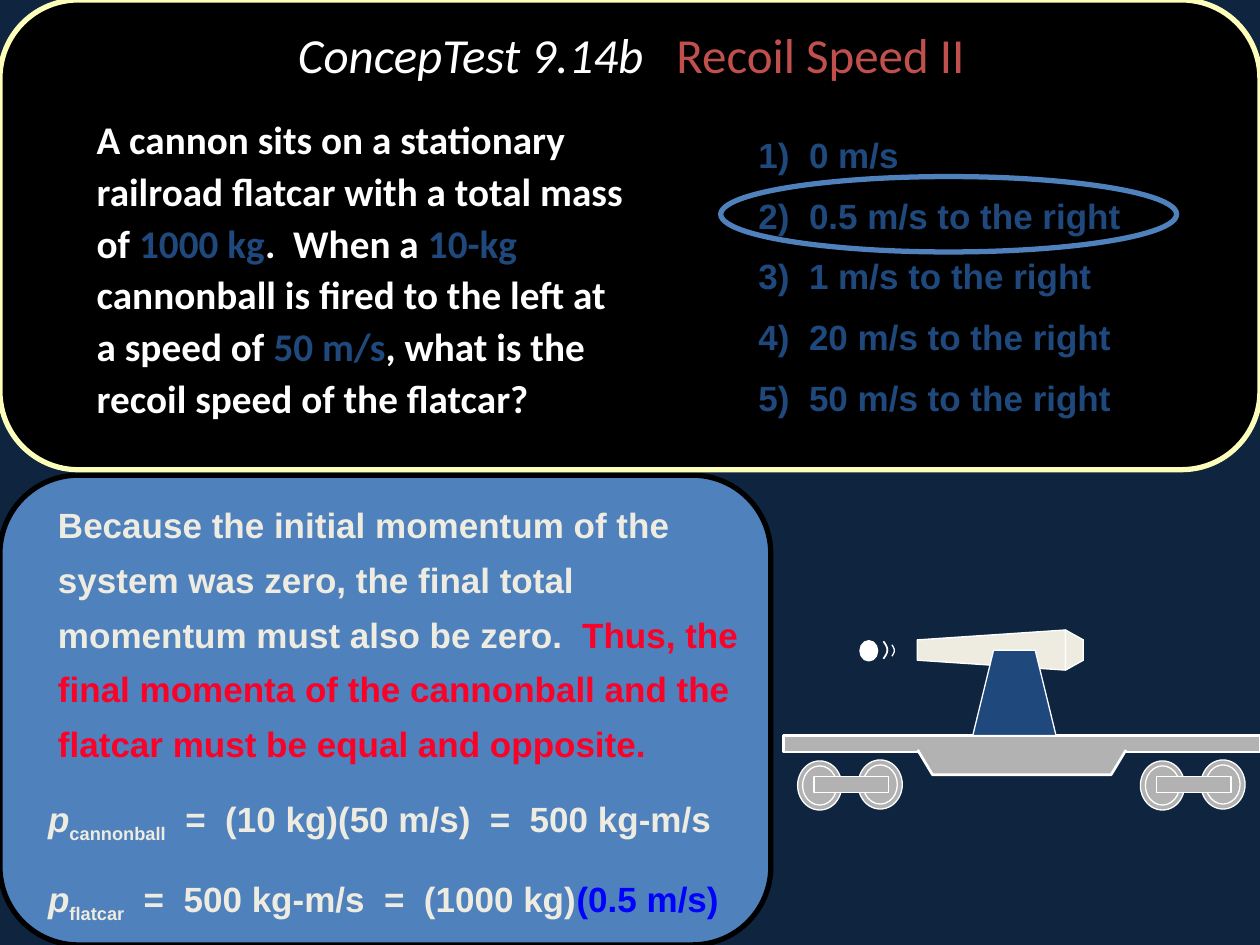
from math import pi, sin

from pptx import Presentation
from pptx.dml.color import RGBColor
from pptx.enum.shapes import MSO_SHAPE as Kind
from pptx.enum.text import MSO_ANCHOR as Anchor, PP_ALIGN as Align
from pptx.util import Cm, Pt

HUES = {
    "night": "0F243E", "black": "000000", "white": "FFFFFF",
    "cream": "FCFEB9", "ivory": "EEECE1", "blue": "4F81BD",
    "navy": "1F497D", "brick": "C0504D", "red": "FC0128",
    "pure": "0000FF", "grey": "B2B2B2",
}


def hue(name):
    return RGBColor.from_string(HUES[name])


def paint(shape, fill, line, width):
    shape.shadow.inherit = False
    if fill:
        shape.fill.solid()
        shape.fill.fore_color.rgb = hue(fill)
    else:
        shape.fill.background()
    shape.line.color.rgb = hue(line)
    shape.line.width = Pt(width)


def add_form(slide, kind, box, fill, line="white", width=0.75):
    shape = slide.shapes.add_shape(kind, *[Cm(v) for v in box])
    paint(shape, fill, line, width)


def add_path(slide, points, fill, width=0.75, close=True):
    dots = [(Cm(x), Cm(y)) for x, y in points]
    path = slide.shapes.build_freeform(*dots[0])
    path.add_line_segments(dots[1:], close=close)
    paint(path.convert_to_shape(), fill, "white", width)


def add_box(slide, box):
    frame = slide.shapes.add_textbox(*[Cm(v) for v in box]).text_frame
    frame.word_wrap = True
    return frame


def add_para(frame, runs, font, size, space, before=0, left=0, hang=0, bold=True):
    """Write one paragraph; runs are (text, colour, style), style "i" or "sub"."""
    para = frame.paragraphs[0]
    if para.runs:
        para = frame.add_paragraph()
    para.line_spacing = space
    para.space_before = Pt(before)
    props = para._p.get_or_add_pPr()
    props.set("marL", str(Cm(left)))
    props.set("indent", str(-Cm(hang)))
    para.font.name = font
    para.font.size = Pt(size)
    para.font.bold = bold
    for text, color, style in runs:
        run = para.add_run()
        run.text = text
        run.font.color.rgb = hue(color)
        if style == "i":
            run.font.italic = True
        elif style == "sub":
            run.font.size = Pt(18)
            run.font._element.set("baseline", "-25000")
    return para


def add_title(slide):
    frame = add_box(slide, (2.59, 0, 20.27, 2.34))
    frame.vertical_anchor = Anchor.MIDDLE
    runs = [("ConcepTest 9.14b   ", "white", "i"),
            ("Recoil Speed II", "brick", "")]
    para = add_para(frame, runs, "Calibri", 28, 0.9, bold=False)
    para.alignment = Align.CENTER


def add_question(slide):
    frame = add_box(slide, (0.58, 2.11, 12.29, 7.32))
    runs = [
        ("A cannon sits on a stationary railroad flatcar with a total mass of ",
         "white", ""),
        ("1000 kg", "navy", ""),
        (".  When a ", "white", ""),
        ("10-kg", "navy", ""),
        (" cannonball is fired to the left at a speed of ", "white", ""),
        ("50 m/s", "navy", ""),
        (", what is the recoil speed of the flatcar?", "white", ""),
    ]
    add_para(frame, runs, "Calibri", 22.4, 1.1, before=4.5, left=1.12)


def add_answers(slide):
    frame = add_box(slide, (15.04, 2.39, 9.14, 6.35))
    speeds = ["0 m/s"] + [f"{v} m/s to the right" for v in ("0.5", 1, 20, 50)]
    for num, speed in enumerate(speeds, 1):
        add_para(frame, [(f"{num})  {speed}", "navy", "")], "Arial", 20, 1.2,
                 before=6, left=1.12, hang=1.12)


def add_reason(slide):
    frame = add_box(slide, (0.13, 9.78, 15.39, 8.81))
    runs = [
        ("Because the initial momentum of the system was zero, the final total "
         "momentum must also be zero.  ", "ivory", ""),
        ("Thus, the final momenta of the cannonball and the flatcar must be "
         "equal and opposite.", "red", ""),
    ]
    add_para(frame, runs, "Arial", 20, 1.3, before=10, left=0.79)
    sums = [
        ("cannonball", "  =  (10 kg)(50 m/s)  =  500 kg-m/s", ""),
        ("flatcar", "  =  500 kg-m/s  =  (1000 kg)", "(0.5 m/s)"),
    ]
    for name, work, result in sums:
        runs = [("p", "ivory", "i"), (name, "ivory", "sub"), (work, "ivory", "")]
        if result:
            runs.append((result, "pure", ""))
        add_para(frame, runs, "Arial", 20, 1.3, before=11, left=0.59)


def add_truck(slide, left):
    """Two double-rimmed wheels joined by a bar."""
    for x, y in ((left, 15.34), (left + 1.22, 15.32)):
        for gap in (0, 0.1):
            box = (x + gap, y + gap, 0.89 - 2 * gap, 0.99 - 2 * gap)
            add_form(slide, Kind.OVAL, box, "grey")
    add_form(slide, Kind.RECTANGLE, (left + 0.33, 15.65, 1.5, 0.33), "grey")


def add_arc(slide, x, top, drop, bulge, width):
    steps = 8
    points = [(x + bulge * sin(pi * n / steps), top + drop * n / steps)
              for n in range(steps + 1)]
    add_path(slide, points, None, width, close=False)


def add_car(slide):
    # Flatcar bed and wheels
    add_form(slide, Kind.RECTANGLE, (15.8, 14.83, 9.6, 0.33), "grey", width=1.5)
    bed = [(18.5, 15.12), (18.8, 15.62), (22.4, 15.62), (22.7, 15.12)]
    add_path(slide, bed, "grey", 1.5, close=False)
    for left in (16.08, 22.99):
        add_truck(slide, left)

    # Cannon: barrel, breech, stand
    for tip in (18.49, 21.84):
        add_path(slide, [(21.48, 12.7), (tip, 12.9), (tip, 13.31), (21.48, 13.51)],
                 "ivory")
    stand = [(19.61, 14.83), (20.03, 13.11), (20.87, 13.11), (21.29, 14.83)]
    add_path(slide, stand, "navy")

    # Cannonball and its motion marks
    add_form(slide, Kind.OVAL, (17.35, 12.93, 0.33, 0.38), "white", width=1.5)
    add_arc(slide, 17.81, 12.93, 0.35, 0.08, 1)
    add_arc(slide, 17.98, 13, 0.23, 0.05, 0.75)


def main():
    deck = Presentation()
    deck.slide_width, deck.slide_height = Cm(25.4), Cm(19.05)
    slide = deck.slides.add_slide(deck.slide_layouts[6])
    slide.background.fill.solid()
    slide.background.fill.fore_color.rgb = hue("night")

    # Panels
    add_form(slide, Kind.ROUNDED_RECTANGLE, (0, 9.58, 15.54, 9.47), "blue", "black", 3)
    add_form(slide, Kind.ROUNDED_RECTANGLE, (0, 0, 25.4, 9.47), "black", "cream", 3)

    # Text, with a ring round the right answer
    add_title(slide)
    add_form(slide, Kind.OVAL, (14.53, 3.56, 9.19, 1.52), None, "blue", 3)
    add_reason(slide)
    add_car(slide)
    add_answers(slide)
    add_question(slide)
    deck.save("out.pptx")


if __name__ == "__main__":
    main()
